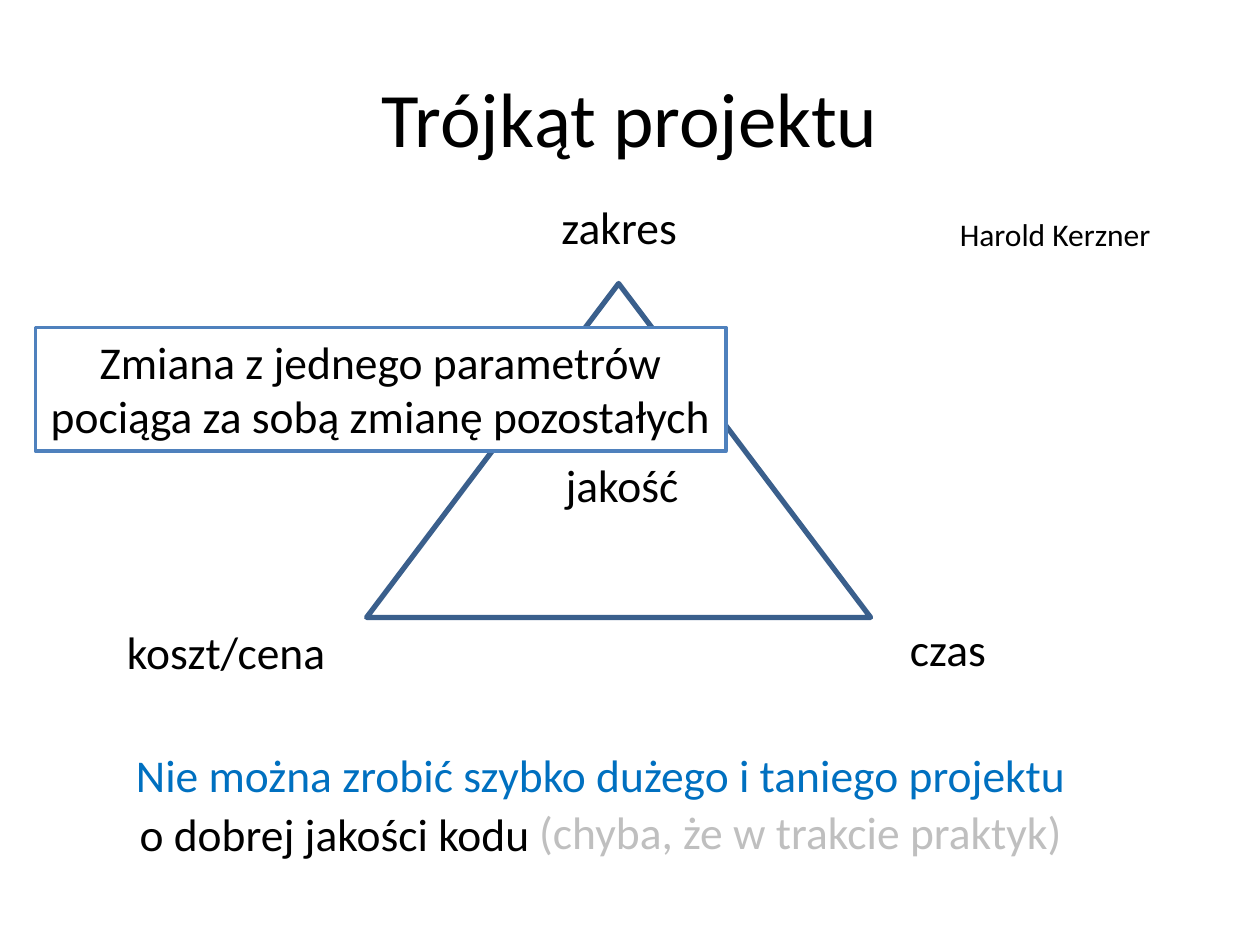
from pptx import Presentation
from pptx.dml.color import RGBColor
from pptx.enum.shapes import MSO_SHAPE
from pptx.enum.text import MSO_ANCHOR, PP_ALIGN
from pptx.util import Pt

LEFT, CENTER = PP_ALIGN.LEFT, PP_ALIGN.CENTER
MIDDLE, TOP = MSO_ANCHOR.MIDDLE, MSO_ANCHOR.TOP
TRIANGLE, RECTANGLE = MSO_SHAPE.ISOSCELES_TRIANGLE, MSO_SHAPE.RECTANGLE

BLACK = RGBColor(0x00, 0x00, 0x00)
WHITE = RGBColor(0xFF, 0xFF, 0xFF)
BLUE = RGBColor(0x00, 0x70, 0xC0)
GRAY = RGBColor(0xBF, 0xBF, 0xBF)
DARK_LINE = RGBColor(0x3A, 0x5F, 0x8C)
CALLOUT_LINE = RGBColor(0x4F, 0x81, 0xBD)

FONT = "Calibri"
BODY_SIZE = 26
LABEL_HEIGHT = 38.9

# Frames are (left, top, width, height) in points
TITLE = ("Trójkąt projektu", (36, 21.6, 648, 90))
AUTHOR = ("Harold Kerzner", (541.4, 119.5, 124.6, 28.8))
TRIANGLE_FRAME = (209.5, 162, 288, 190.8)
CALLOUT_LINES = ["Zmiana z jednego parametrów", "pociąga za sobą zmianę pozostałych"]
CALLOUT_FRAME = (20.2, 187.2, 394.6, 70.6)

# Text, left, top, width, alignment, colour
LABELS = [
    ("jakość", 316.1, 257.8, 79.9, LEFT, BLACK),
    ("koszt/cena", 64.8, 352.8, 128.9, CENTER, BLACK),
    ("czas", 512.6, 351.4, 58.3, CENTER, BLACK),
    ("zakres", 313.2, 110.2, 81.4, CENTER, BLACK),
    ("Nie można zrobić szybko dużego i taniego projektu", 70.6, 423.4, 556.6, LEFT, BLUE),
    ("o dobrej jakości kodu", 72.7, 457.2, 239.8, LEFT, BLACK),
    ("(chyba, że w trakcie praktyk)", 301, 455.8, 316.1, LEFT, GRAY),
]


def write(shape, lines, size, align, color=BLACK, anchor=TOP):
    """Fill a shape with one paragraph, its lines parted by line breaks."""
    frame = shape.text_frame
    frame.word_wrap = False
    frame.vertical_anchor = anchor
    para = frame.paragraphs[0]
    para.alignment = align
    for index, line in enumerate(lines):
        if index:
            para.add_line_break()
        span = para.add_run()
        span.text = line
        span.font.name = FONT
        span.font.size = Pt(size)
        span.font.color.rgb = color


def add_text(page, text, frame, size, align, color=BLACK, anchor=TOP):
    box = page.shapes.add_textbox(*map(Pt, frame))
    write(box, [text], size, align, color, anchor)


def add_outlined(page, kind, frame, line_color, line_width):
    shape = page.shapes.add_shape(kind, *map(Pt, frame))
    shape.shadow.inherit = False
    shape.fill.background()
    shape.line.color.rgb = line_color
    shape.line.width = Pt(line_width)
    return shape


def main():
    deck = Presentation()
    deck.slide_width, deck.slide_height = Pt(720), Pt(540)
    page = deck.slides.add_slide(deck.slide_layouts[6])

    add_text(page, *TITLE, 44, CENTER, anchor=MIDDLE)
    add_text(page, *AUTHOR, 18, LEFT)
    add_outlined(page, TRIANGLE, TRIANGLE_FRAME, DARK_LINE, 3)
    for text, left, top, width, align, color in LABELS:
        add_text(page, text, (left, top, width, LABEL_HEIGHT), BODY_SIZE, align, color)

    callout = add_outlined(page, RECTANGLE, CALLOUT_FRAME, CALLOUT_LINE, 2)
    callout.fill.solid()
    callout.fill.fore_color.rgb = WHITE
    write(callout, CALLOUT_LINES, BODY_SIZE, CENTER)

    deck.save("out.pptx")


if __name__ == "__main__":
    main()
